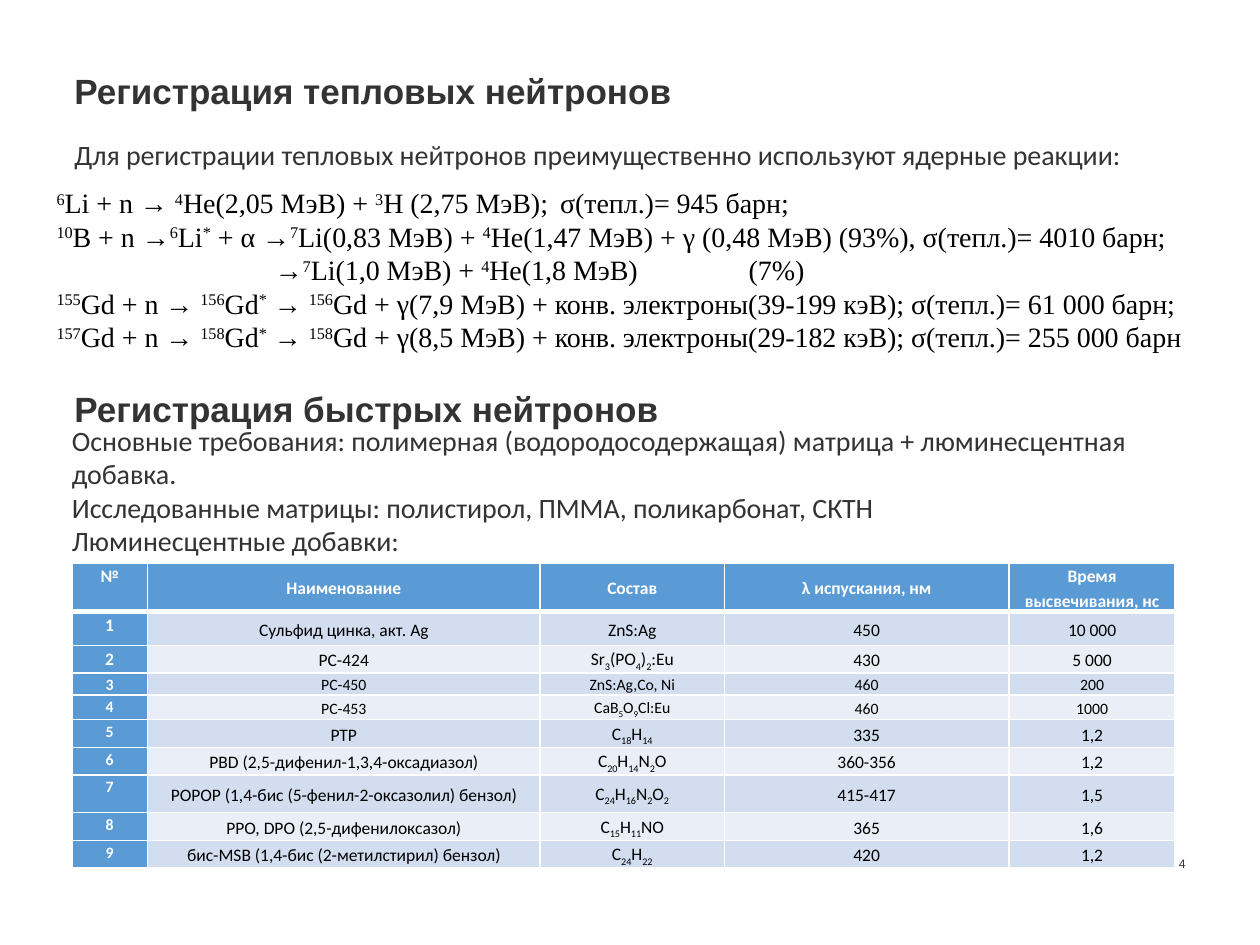
from dataclasses import dataclass

import lxml.etree
import pptx
import pptx.dml.color
import pptx.enum.text
import pptx.oxml.ns
import pptx.util

Cm = pptx.util.Cm
ALIGN = pptx.enum.text.PP_ALIGN
ANCHOR = pptx.enum.text.MSO_ANCHOR


@dataclass(frozen=True)
class Theme:
    ink: str = "333333"
    black: str = "000000"
    white: str = "FFFFFF"
    accent: str = "5B9BD5"
    bands: tuple = ("D2DEEF", "EAEFF7")
    heading_font: str = "Arial"
    body_font: str = "Calibri"
    formula_font: str = "Times New Roman"
    heading: int = 20
    body: int = 16
    cell: int = 10
    small_cell: int = 9
    footer: int = 7
    superscript: int = 30000
    subscript: int = -25000


THEME = Theme()

# ^ encloses superscripts; each line has its tab stops in cm
REACTIONS = [
    ("^6^Li + n → ^4^He(2,05 МэВ) + ^3^H (2,75 МэВ);\tσ(тепл.)= 945 барн;", [10.15]),
    ("^10^B + n →^6^Li^*^ + α →^7^Li(0,83 МэВ) + ^4^He(1,47 МэВ) + γ (0,48 МэВ) (93%), "
     "σ(тепл.)= 4010 барн;", []),
    ("\t→^7^Li(1,0 МэВ) + ^4^He(1,8 МэВ)\t(7%)", [4.4, 13.95]),
    ("^155^Gd + n → ^156^Gd^*^ → ^156^Gd + γ(7,9 МэВ) + конв. электроны(39-199 кэВ); "
     "σ(тепл.)= 61 000 барн;", []),
    ("^157^Gd + n → ^158^Gd^*^ → ^158^Gd + γ(8,5 МэВ) + конв. электроны(29-182 кэВ); "
     "σ(тепл.)= 255 000 барн", []),
]

REQUIREMENTS = [
    "Основные требования: полимерная (водородосодержащая) матрица + люминесцентная добавка.",
    "Исследованные матрицы: полистирол, ПММА, поликарбонат, СКТН",
    "Люминесцентные добавки:",
]

# _ encloses subscripts
ADDITIVES = [
    ("№", "Наименование", "Состав", "λ испускания, нм", "Время высвечивания, нс"),
    ("1", "Сульфид цинка, акт. Ag", "ZnS:Ag", "450", "10 000"),
    ("2", "РС-424", "Sr_3_(PO_4_)_2_:Eu", "430", "5 000"),
    ("3", "РС-450", "ZnS:Ag,Co, Ni", "460", "200"),
    ("4", "РС-453", "CaB_5_O_9_Cl:Eu", "460", "1000"),
    ("5", "PTP", "C_18_H_14_", "335", "1,2"),
    ("6", "PBD (2,5-дифенил-1,3,4-оксадиазол)", "C_20_H_14_N_2_O", "360-356", "1,2"),
    ("7", "POPOP (1,4-бис (5-фенил-2-оксазолил) бензол)", "C_24_H_16_N_2_O_2_", "415-417", "1,5"),
    ("8", "PPO, DPO (2,5-дифенилоксазол)", "C_15_H_11_NO", "365", "1,6"),
    ("9", "бис-MSB (1,4-бис (2-метилстирил) бензол)", "C_24_H_22_", "420", "1,2"),
]
COLUMN_WIDTHS = [1.52, 7.92, 3.71, 5.74, 3.35]
ROW_HEIGHTS = [0.91, 0.69, 0.28, 0.28, 0.28, 0.33, 0.56, 0.76, 0.56, 0.43]
SMALL_ROWS = (3, 4)


def rgb(value):
    return pptx.dml.color.RGBColor.from_string(value)


def add_spans(para, text, font, size, color, bold=False, mark=None, shift=0):
    """Adds the text run by run; the parts between marks get a shifted baseline."""
    for index, part in enumerate(text.split(mark) if mark else [text]):
        if not part:
            continue
        span = para.add_run()
        span.text = part
        span.font.name = font
        span.font.size = pptx.util.Pt(size)
        span.font.bold = bold
        span.font.color.rgb = rgb(color)
        if index % 2:
            span._r.get_or_add_rPr().set("baseline", str(shift))


def add_frame(page, box, anchor=ANCHOR.TOP, inset=(0, 0)):
    frame = page.shapes.add_textbox(*(Cm(length) for length in box)).text_frame
    frame.word_wrap = True
    frame.vertical_anchor = anchor
    frame.margin_left = frame.margin_right = Cm(inset[0])
    frame.margin_top = frame.margin_bottom = Cm(inset[1])
    return frame


def add_paras(frame, count):
    return [frame.paragraphs[0]] + [frame.add_paragraph() for _ in range(count - 1)]


def add_heading(page, box, text):
    para = add_frame(page, box).paragraphs[0]
    para.line_spacing = 0.9
    add_spans(para, text, THEME.heading_font, THEME.heading, THEME.ink, bold=True)


def add_body(page, box, lines):
    for para, line in zip(add_paras(add_frame(page, box), len(lines)), lines):
        add_spans(para, line, THEME.body_font, THEME.body, THEME.ink)


def add_reactions(page, box):
    frame = add_frame(page, box, inset=(0.25, 0.13))
    for para, (text, stops) in zip(add_paras(frame, len(REACTIONS)), REACTIONS):
        para.alignment = ALIGN.JUSTIFY
        if stops:
            tabs = lxml.etree.SubElement(para._p.get_or_add_pPr(), pptx.oxml.ns.qn("a:tabLst"))
            for stop in stops:
                lxml.etree.SubElement(tabs, pptx.oxml.ns.qn("a:tab"), pos=str(Cm(stop)), algn="l")
        add_spans(para, text, THEME.formula_font, THEME.body, THEME.black,
                  mark="^", shift=THEME.superscript)


def set_borders(cell, bottom):
    for side, width in (("L", 1), ("R", 1), ("T", 1), ("B", bottom)):
        line = lxml.etree.SubElement(cell._tc.get_or_add_tcPr(), pptx.oxml.ns.qn(f"a:ln{side}"),
                                     w=str(pptx.util.Pt(width)))
        fill = lxml.etree.SubElement(line, pptx.oxml.ns.qn("a:solidFill"))
        lxml.etree.SubElement(fill, pptx.oxml.ns.qn("a:srgbClr"), val=THEME.white)


def fill_cell(cell, text, row, column):
    is_key = row == 0 or column == 0
    is_small = row in SMALL_ROWS or (column == 0 and row > 2)
    set_borders(cell, bottom=3 if row == 0 else 1)
    cell.fill.solid()
    cell.fill.fore_color.rgb = rgb(THEME.accent if is_key else THEME.bands[(row - 1) % 2])
    cell.vertical_anchor = ANCHOR.TOP if column == 0 else ANCHOR.MIDDLE
    cell.margin_left = cell.margin_right = Cm(0.15)
    cell.margin_top = cell.margin_bottom = 0
    para = cell.text_frame.paragraphs[0]
    para.alignment = ALIGN.CENTER
    para.line_spacing = 1.15
    add_spans(para, text, THEME.body_font, THEME.small_cell if is_small else THEME.cell,
              THEME.white if is_key else THEME.black, bold=is_key,
              mark="_", shift=THEME.subscript)


def add_additives(page, box):
    shape = page.shapes.add_table(len(ADDITIVES), len(COLUMN_WIDTHS),
                                  *(Cm(length) for length in box))
    table = shape.table
    for column, width in zip(table.columns, COLUMN_WIDTHS):
        column.width = Cm(width)
    for row, height in zip(table.rows, ROW_HEIGHTS):
        row.height = Cm(height)
    shape.height = Cm(box[3])
    for row, values in enumerate(ADDITIVES):
        for column, text in enumerate(values):
            fill_cell(table.cell(row, column), text, row, column)


def add_page_number(page, box, number):
    para = add_frame(page, box, anchor=ANCHOR.BOTTOM).paragraphs[0]
    para.alignment = ALIGN.RIGHT
    add_spans(para, number, THEME.heading_font, THEME.footer, THEME.ink)


def main():
    deck = pptx.Presentation()
    deck.slide_width, deck.slide_height = Cm(25.4), Cm(19.05)
    page = deck.slides.add_slide(deck.slide_layouts[6])

    # Thermal neutrons
    add_heading(page, (1.5, 1.5, 15.47, 1.27), "Регистрация тепловых нейтронов")
    add_body(page, (1.5, 2.77, 22.43, 0.76),
             ["Для регистрации тепловых нейтронов преимущественно используют ядерные реакции:"])
    add_reactions(page, (0.89, 3.61, 23.95, 3.68))

    # Fast neutrons
    add_heading(page, (1.5, 7.9, 15.47, 1.27), "Регистрация быстрых нейтронов")
    add_body(page, (1.45, 8.53, 22.43, 1.42), REQUIREMENTS)
    add_additives(page, (1.45, 11.35, 22.24, 5.89))

    # Footer
    add_page_number(page, (22.3, 17.15, 1.6, 0.41), "4")
    deck.save("out.pptx")


if __name__ == "__main__":
    main()
